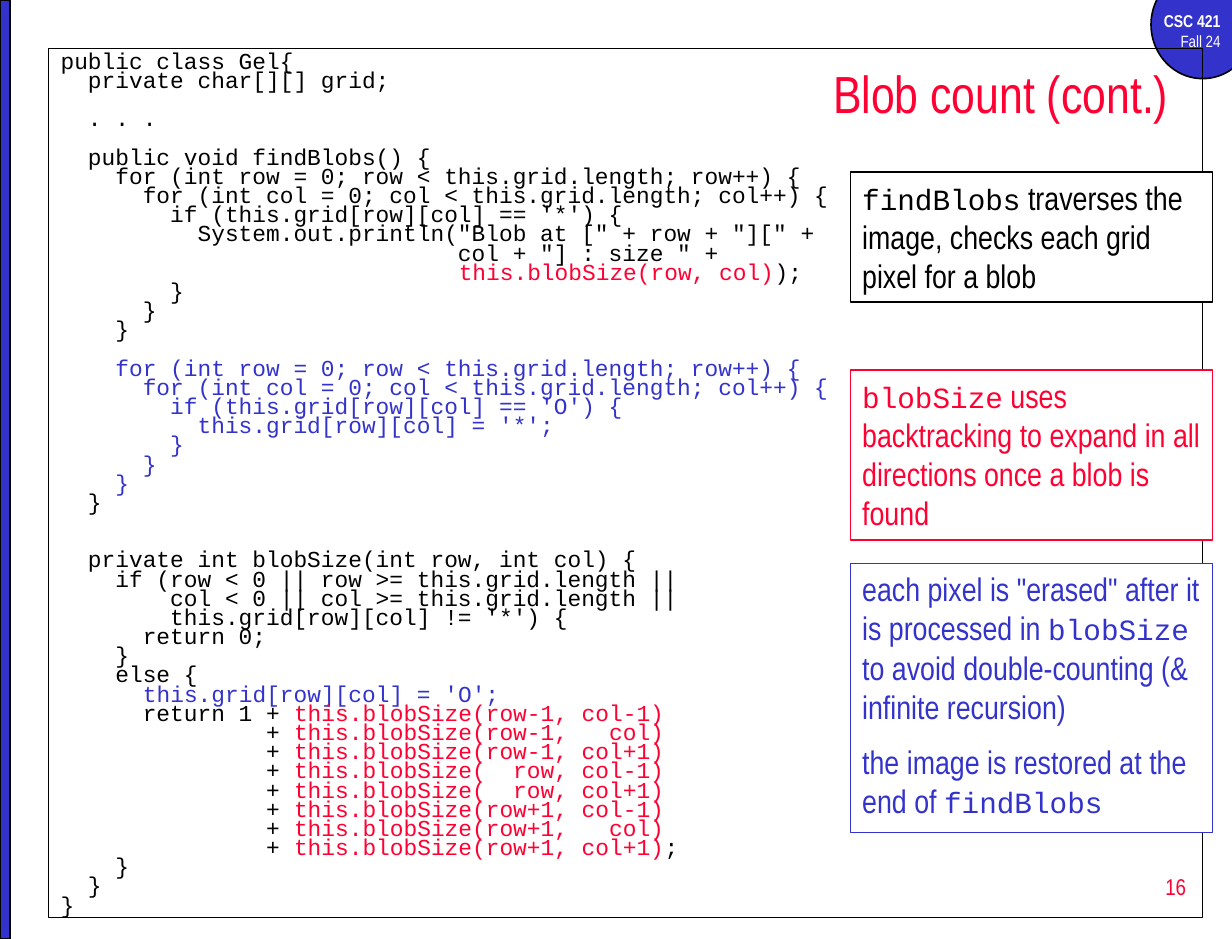
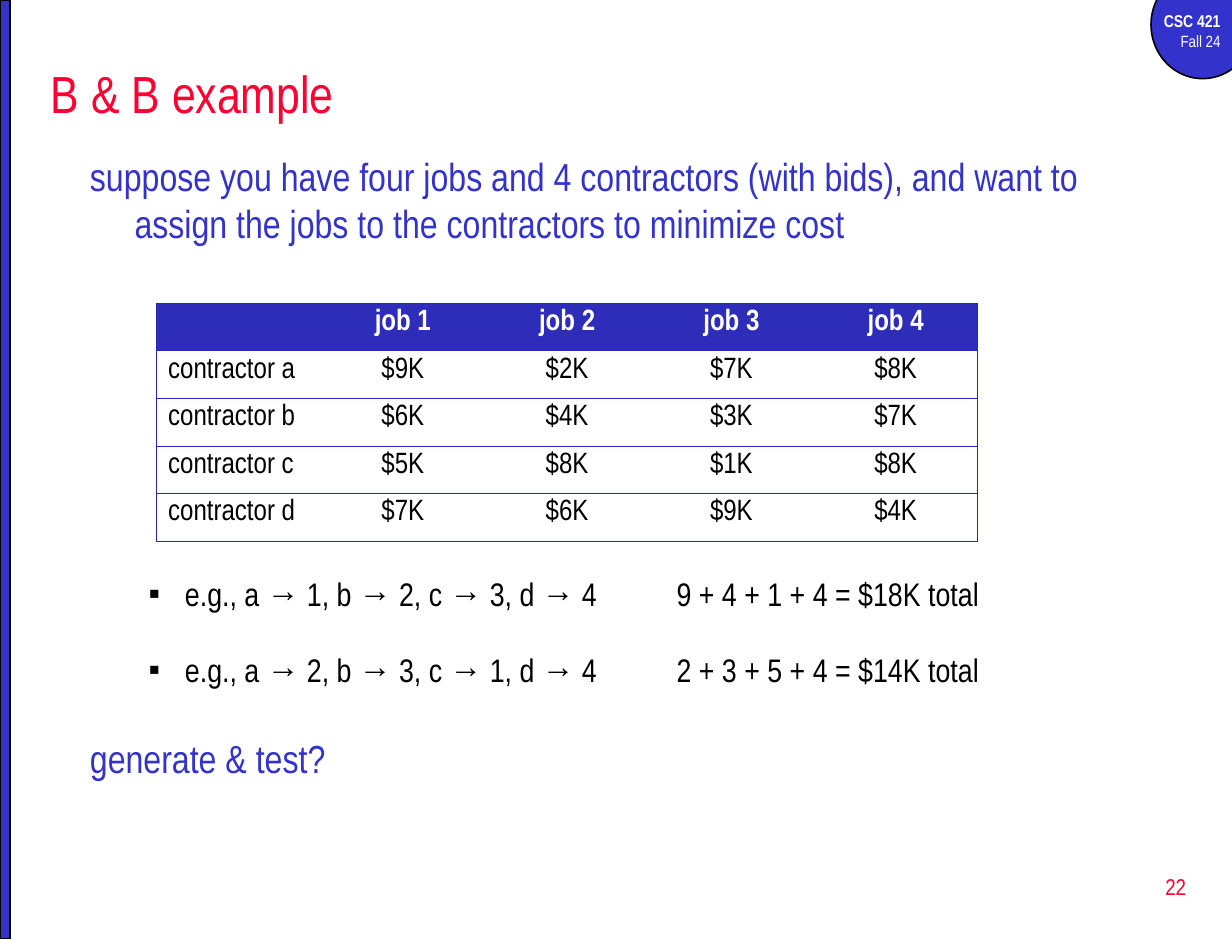
"""Build two algorithm slides: blob counting code and a job-bidding example."""
from itertools import product

from lxml.etree import SubElement
from pptx import Presentation
from pptx.dml.color import RGBColor
from pptx.enum.shapes import MSO_SHAPE as Shape
from pptx.enum.text import MSO_ANCHOR as Anchor, MSO_AUTO_SIZE as Fit, PP_ALIGN as Align
from pptx.oxml import parse_xml
from pptx.oxml.ns import nsdecls, qn
from pptx.util import Emu, Inches, Pt

COLORS = {
    "blue": "3333CC", "red": "FF0033", "black": "000000", "white": "FFFFFF",
    "header": "2D2DB9", "rule": "2828B8",
}
SANS, MONO = "Arial Narrow", "Courier New"
COLUMNS, ROWS = 126, 96
CODE_LINE = 11.76


def rgb(name):
    """Return the palette colour called name."""
    return RGBColor.from_string(COLORS[name])


def write(frame, text, size=20, color="black", font=SANS, bold=False, align=Align.LEFT,
          before=0, spacing=1.0, indent=(0, 0), level=0, bullet=None):
    """Add a paragraph; text is a string or a list of strings and (string, format) runs."""
    paragraph = frame.paragraphs[0]
    if paragraph.runs:
        paragraph = frame.add_paragraph()
    paragraph.level, paragraph.alignment = level, align
    paragraph.line_spacing, paragraph.space_before = spacing, Pt(before)
    properties = paragraph._p.get_or_add_pPr()
    properties.set("marL", str(Inches(indent[0])))
    properties.set("indent", str(Inches(indent[1])))
    properties.set("defTabSz", str(Inches(1)))
    if bullet:
        SubElement(properties, qn("a:buChar")).set("char", bullet)
    else:
        SubElement(properties, qn("a:buNone"))
    for part in [text] if isinstance(text, str) else text:
        words, changes = (part, {}) if isinstance(part, str) else part
        style = {"size": size, "color": color, "font": font, **changes}
        run = paragraph.add_run()
        run.text = words
        run.font.size, run.font.name, run.font.bold = Pt(style["size"]), style["font"], bold
        run.font.color.rgb = rgb(style["color"])


class Deck:
    """Holds the presentation, its grid and the current slide."""

    def __init__(self):
        """Start an empty presentation of the right size."""
        self.show = Presentation()
        self.show.slide_width, self.show.slide_height = Inches(10.5), Inches(8)
        self.slide = None

    def place(self, left, top, width, height):
        """Turn grid columns and rows into lengths."""
        column, row = self.show.slide_width / COLUMNS, self.show.slide_height / ROWS
        return [Emu(round(n * unit)) for n, unit in
                ((left, column), (top, row), (width, column), (height, row))]

    def new_slide(self):
        """Add a slide with the course badge and the side band."""
        self.slide = self.show.slides.add_slide(self.show.slide_layouts[1])
        self.shape(Shape.OVAL, (117.72, -3, 10.56, 11.04), "blue")
        badge = self.text_area((116, 0.5, 10, 5.5))
        write(badge, "CSC 421", size=10.5, color="white", bold=True, align=Align.RIGHT)
        write(badge, "Fall 24", size=10, color="white", align=Align.RIGHT)
        self.shape(Shape.RECTANGLE, (0, 0, 1, ROWS), "blue")

    def shape(self, kind, box, fill, line="black"):
        """Draw a flat outlined shape."""
        drawn = self.slide.shapes.add_shape(kind, *self.place(*box))
        drawn.shadow.inherit = False
        drawn.fill.solid()
        drawn.fill.fore_color.rgb = rgb(fill)
        drawn.line.color.rgb = rgb(line)
        drawn.line.width = Pt(1)
        return drawn

    def text_area(self, box, anchor=Anchor.TOP):
        """Add a text box and return its frame."""
        frame = self.slide.shapes.add_textbox(*self.place(*box)).text_frame
        frame.word_wrap, frame.vertical_anchor = True, anchor
        return frame

    def placeholder(self, index, box, anchor):
        """Move a placeholder to box, in front of what is drawn so far."""
        holder = self.slide.placeholders[index]
        holder.left, holder.top, holder.width, holder.height = self.place(*box)
        holder.element.getparent().append(holder.element)
        frame = holder.text_frame
        frame.word_wrap, frame.auto_size, frame.vertical_anchor = True, Fit.NONE, anchor
        return holder

    def title(self, text, left, width):
        """Fill the title."""
        holder = self.placeholder(0, (left, 5, width, 9), Anchor.MIDDLE)
        write(holder.text_frame, text, size=32, color="red")

    def body(self, box, outlined=False):
        """Place the body and return its frame."""
        holder = self.placeholder(1, box, Anchor.TOP)
        if outlined:
            holder.line.color.rgb = rgb("black")
            holder.line.width = Pt(0.75)
        return holder.text_frame

    def number(self, text):
        """Write the slide number."""
        frame = self.text_area((96.25, 87.5, 26.25, 6.33), Anchor.MIDDLE)
        write(frame, text, size=14, color="red", align=Align.RIGHT)

    def callout(self, top, height, color, *paragraphs):
        """Draw a framed remark at the right of the code."""
        frame = self.shape(Shape.RECTANGLE, (87, top, 37, height), "white", color).text_frame
        frame.word_wrap, frame.vertical_anchor = True, Anchor.TOP
        frame.auto_size = Fit.SHAPE_TO_FIT_TEXT
        for text in paragraphs:
            write(frame, text, color=color, before=10)

    def table(self, box, rows):
        """Draw a table with a filled header and horizontal rules."""
        count, last = len(rows), len(rows[0]) - 1
        grid = self.slide.shapes.add_table(count, last + 1, *self.place(*box)).table
        grid.horz_banding = False
        for (r, row), c in product(enumerate(rows), range(last + 1)):
            cell = grid.cell(r, c)
            if r == 0:
                cell.fill.solid()
                cell.fill.fore_color.rgb = rgb("header")
            else:
                cell.fill.background()
            self.borders(cell, L=c == 0, R=c == last, T=True, B=True)
            if row[c]:
                write(cell.text_frame, row[c], size=18, bold=r == 0,
                      color="black" if r else "white",
                      align=Align.CENTER if c else Align.LEFT)

    @staticmethod
    def borders(cell, **sides):
        """Rule the sides that are true and clear the others."""
        properties = cell._tc.get_or_add_tcPr()
        ruled = f'<a:solidFill><a:srgbClr val="{COLORS["rule"]}"/></a:solidFill>'
        for position, (side, shown) in enumerate(sides.items()):
            paint = ruled if shown else "<a:noFill/>"
            properties.insert(position, parse_xml(
                f'<a:ln{side} {nsdecls("a")} w="{Pt(0.75)}">{paint}</a:ln{side}>'))


def red(text):
    """Mark code as red."""
    return text, {"color": "red"}


def blue(text):
    """Mark code as blue."""
    return text, {"color": "blue"}


def mono(text):
    """Mark a method name inside a remark."""
    return text, {"font": MONO, "size": 18}


def blob_code():
    """Return the lines of the class; an empty line stands for a gap."""
    loops = ["    for (int row = 0; row < this.grid.length; row++) {",
             "      for (int col = 0; col < this.grid.length; col++) {"]
    closing = ["        }", "      }", "    }"]
    restore = loops + ["        if (this.grid[row][col] == 'O') {",
                       "          this.grid[row][col] = '*';"] + closing
    neighbours = [f"this.blobSize({row}, {col})" for row, col in
                  product(("row-1", "  row", "row+1"), ("col-1", "  col", "col+1"))
                  if (row, col) != ("  row", "  col")]
    sums = [["      return 1 + ", red(neighbours[0])]]
    sums += [[" " * 15 + "+ ", red(call)] for call in neighbours[1:]]
    sums[-1].append(";")
    return [
        "public class Gel{",
        "  private char[][] grid;",
        "",
        "  . . .",
        "",
        "  public void findBlobs() {",
        *loops,
        "        if (this.grid[row][col] == '*') {",
        '          System.out.println("Blob at [" + row + "][" +',
        " " * 29 + 'col + "] : size " +',
        [" " * 29, red("this.blobSize(row, col)"), ");"],
        *closing,
        "",
        *([blue(line)] for line in restore),
        "  }",
        "",
        "",
        "  private int blobSize(int row, int col) {",
        "    if (row < 0 || row >= this.grid.length ||",
        "        col < 0 || col >= this.grid.length ||",
        "        this.grid[row][col] != '*') {",
        "      return 0;",
        "    }",
        "    else {",
        ["      ", blue("this.grid[row][col] = 'O';")],
        *sums,
        "    }",
        "  }",
        "}",
    ]


def blob_slide(deck):
    """Build the blob count slide."""
    deck.new_slide()
    deck.number("16")
    deck.title("Blob count (cont.)", 84, 39)
    listing = deck.body((5, 4.92, 118, 88.92), outlined=True)
    gap = 0
    for line in blob_code():
        if line:
            write(listing, line, size=14, font=MONO, spacing=0.7, before=gap,
                  indent=(0.38, -0.38))
        gap = 0 if line else gap + CODE_LINE
    deck.callout(17.6, 13.3, "black", [
        mono("findBlobs"), " traverses the image, checks each grid pixel for a blob"])
    deck.callout(57.6, 27.5, "blue", [
        'each pixel is "erased" after it is processed in ', mono("blobSize"),
        " to avoid double-counting (& infinite recursion)"],
        ["the image is restored at the end of ", mono("findBlobs")])
    deck.callout(37.8, 17.4, "red", [
        mono("blobSize"),
        " uses backtracking to expand in all directions once a blob is found"])


def bidding_slide(deck):
    """Build the branch and bound example slide."""
    deck.new_slide()
    deck.title("B & B example", 4, 119)
    points = deck.body((8, 15, 113, 71))
    outer = {"size": 24, "color": "blue", "indent": (0.38, -0.38)}
    inner = {"level": 1, "spacing": 0.8, "indent": (0.81, -0.31), "bullet": "▪"}
    write(points, "suppose you have four jobs and 4 contractors (with bids), and want to "
                  "assign the jobs to the contractors to minimize cost", before=4.8, **outer)
    write(points, "e.g., a → 1, b → 2, c → 3, d → 4\t9 + 4 + 1 + 4 = $18K total",
          before=205.6, **inner)
    write(points, "e.g., a → 2, b → 3, c → 1, d → 4\t2 + 3 + 5 + 4 = $14K total",
          before=27.2, **inner)
    write(points, "generate & test?", before=28, **outer)
    deck.number("22")
    bids = {"a": (9, 2, 7, 8), "b": (6, 4, 3, 7), "c": (5, 8, 1, 8), "d": (7, 6, 9, 4)}
    header = ["", *(f"job {job}" for job in range(1, 5))]
    deck.table((16, 31, 84, 24.36), [header] + [
        [f"contractor {name}", *(f"${bid}K" for bid in row)] for name, row in bids.items()])


def main():
    """Build and save the slides."""
    deck = Deck()
    blob_slide(deck)
    bidding_slide(deck)
    deck.show.save("out.pptx")


if __name__ == "__main__":
    main()
